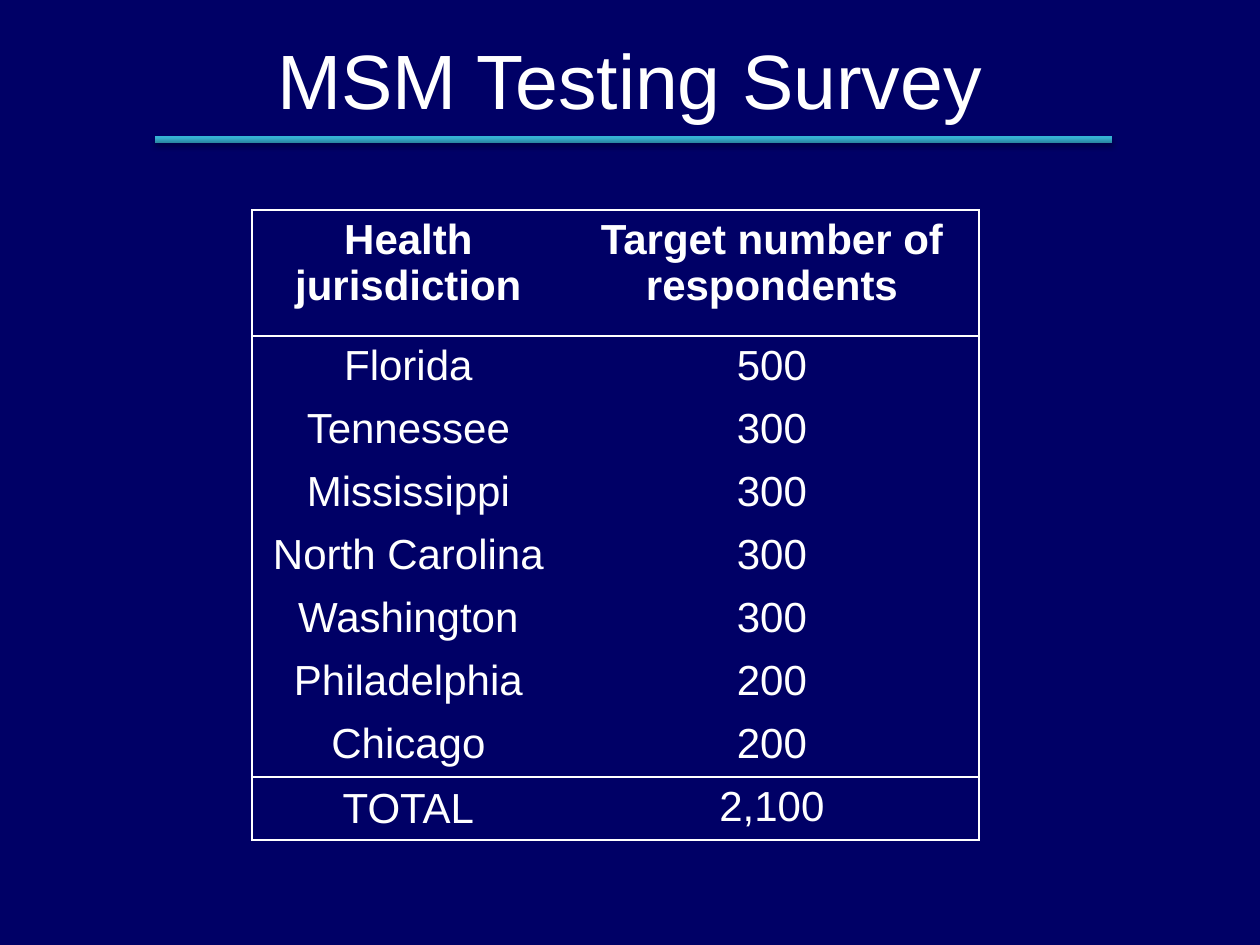
from lxml import etree
from pptx import Presentation
from pptx.dml.color import RGBColor
from pptx.enum.shapes import MSO_SHAPE
from pptx.enum.text import MSO_ANCHOR, PP_ALIGN
from pptx.oxml import parse_xml
from pptx.oxml.ns import nsdecls, qn
from pptx.util import Cm, Pt

CENTER = PP_ALIGN.CENTER
TOP, MIDDLE = MSO_ANCHOR.TOP, MSO_ANCHOR.MIDDLE
RECTANGLE = MSO_SHAPE.RECTANGLE

COLORS = {
    "background": "000066",
    "text": "FFFFFF",
    "border": "FFFFFF",
    "rule_dark": "2A88A2",
    "rule_bright": "37B1D2",
    "rule_edge": "34B4D6",
    "shadow": "000000",
}
TITLE_FONT = {"name": "Arial", "size": Pt(44)}
HEADER_FONT = {"name": "Arial", "size": Pt(24), "bold": True}
BODY_FONT = {"name": "Arial", "size": Pt(24), "bold": False}

ROWS = [
    ("Health jurisdiction", "Target number of respondents"),
    ("Florida", "500"),
    ("Tennessee", "300"),
    ("Mississippi", "300"),
    ("North Carolina", "300"),
    ("Washington", "300"),
    ("Philadelphia", "200"),
    ("Chicago", "200"),
    ("TOTAL", "2,100"),
]
COLUMN_SHARES = (0.43, 0.57)
HEADER_HEIGHT, ROW_HEIGHT = 2.54, 1.04


def write_text(text_frame, text, font_format):
    paragraph = text_frame.paragraphs[0]
    paragraph.alignment = CENTER
    run = paragraph.add_run()
    run.text = text
    for name, value in font_format.items():
        setattr(run.font, name, value)
    run.font.color.rgb = RGBColor.from_string(COLORS["text"])


def add_title(slide, left, top, width, height):
    shape = slide.shapes.add_textbox(Cm(left), Cm(top), Cm(width), Cm(height))
    shape.text_frame.word_wrap = True
    shape.text_frame.vertical_anchor = MIDDLE
    write_text(shape.text_frame, "MSM Testing Survey", TITLE_FONT)


def add_title_rule(slide, left, top, width, height):
    """Draw the shaded bar below the title, with its soft shadow."""
    shape = slide.shapes.add_shape(
        RECTANGLE, Cm(left), Cm(top), Cm(width), Cm(height))
    shape.line.fill.background()
    shape.shadow.inherit = False
    properties = shape._element.spPr
    stops = ((0, "rule_dark"), (80, "rule_bright"), (100, "rule_edge"))
    stop_xml = "".join(
        f'<a:gs pos="{position * 1000}"><a:srgbClr val="{COLORS[color]}"/></a:gs>'
        for position, color in stops)
    gradient = parse_xml(
        f'<a:gradFill {nsdecls("a")} rotWithShape="1"><a:gsLst>{stop_xml}</a:gsLst>'
        '<a:lin ang="16200000" scaled="0"/></a:gradFill>')
    properties.find(qn("a:prstGeom")).addnext(gradient)
    shadow = parse_xml(
        f'<a:outerShdw {nsdecls("a")} blurRad="{Pt(3.1)}" dist="{Pt(1.8)}" '
        f'dir="5400000" rotWithShape="0"><a:srgbClr val="{COLORS["shadow"]}">'
        '<a:alpha val="35000"/></a:srgbClr></a:outerShdw>')
    properties.find(qn("a:effectLst")).append(shadow)


def set_borders(cell, visible_sides):
    """Draw the named sides (L, R, T, B) and clear the others."""
    properties = cell._tc.get_or_add_tcPr()
    for index, side in enumerate("LRTB"):
        line = etree.Element(qn(f"a:ln{side}"), w=str(Pt(1)))
        if side in visible_sides:
            fill = etree.SubElement(line, qn("a:solidFill"))
            etree.SubElement(fill, qn("a:srgbClr"), val=COLORS["border"])
        else:
            etree.SubElement(line, qn("a:noFill"))
        properties.insert(index, line)


def add_survey_table(slide, left, top, width):
    height = HEADER_HEIGHT + ROW_HEIGHT * (len(ROWS) - 1)
    table = slide.shapes.add_table(
        len(ROWS), len(COLUMN_SHARES),
        Cm(left), Cm(top), Cm(width), Cm(height)).table
    table.first_row = table.horz_banding = False
    for column, share in zip(table.columns, COLUMN_SHARES):
        column.width = Cm(width * share)

    total_row = len(ROWS) - 1
    ruled_above = (0, 1, total_row)
    ruled_below = (0, total_row - 1, total_row)
    for row_index, values in enumerate(ROWS):
        is_header = row_index == 0
        table.rows[row_index].height = Cm(HEADER_HEIGHT if is_header else ROW_HEIGHT)
        row_sides = ("T" if row_index in ruled_above else "") + (
            "B" if row_index in ruled_below else "")
        for column_index, text in enumerate(values):
            cell = table.cell(row_index, column_index)
            cell.fill.background()
            cell.vertical_anchor = MIDDLE if text == "TOTAL" else TOP
            write_text(cell.text_frame, text, HEADER_FONT if is_header else BODY_FONT)
            set_borders(cell, "LR"[column_index] + row_sides)


def main():
    presentation = Presentation()
    presentation.slide_width, presentation.slide_height = Cm(25.4), Cm(19.05)
    slide = presentation.slides.add_slide(presentation.slide_layouts[6])
    background = slide.background.fill
    background.solid()
    background.fore_color.rgb = RGBColor.from_string(COLORS["background"])

    add_title(slide, 1.27, 0, 22.86, 3.18)
    add_survey_table(slide, 5.08, 4.23, 14.66)
    add_title_rule(slide, 3.12, 2.75, 19.3, 0.13)
    presentation.save("out.pptx")


if __name__ == "__main__":
    main()
